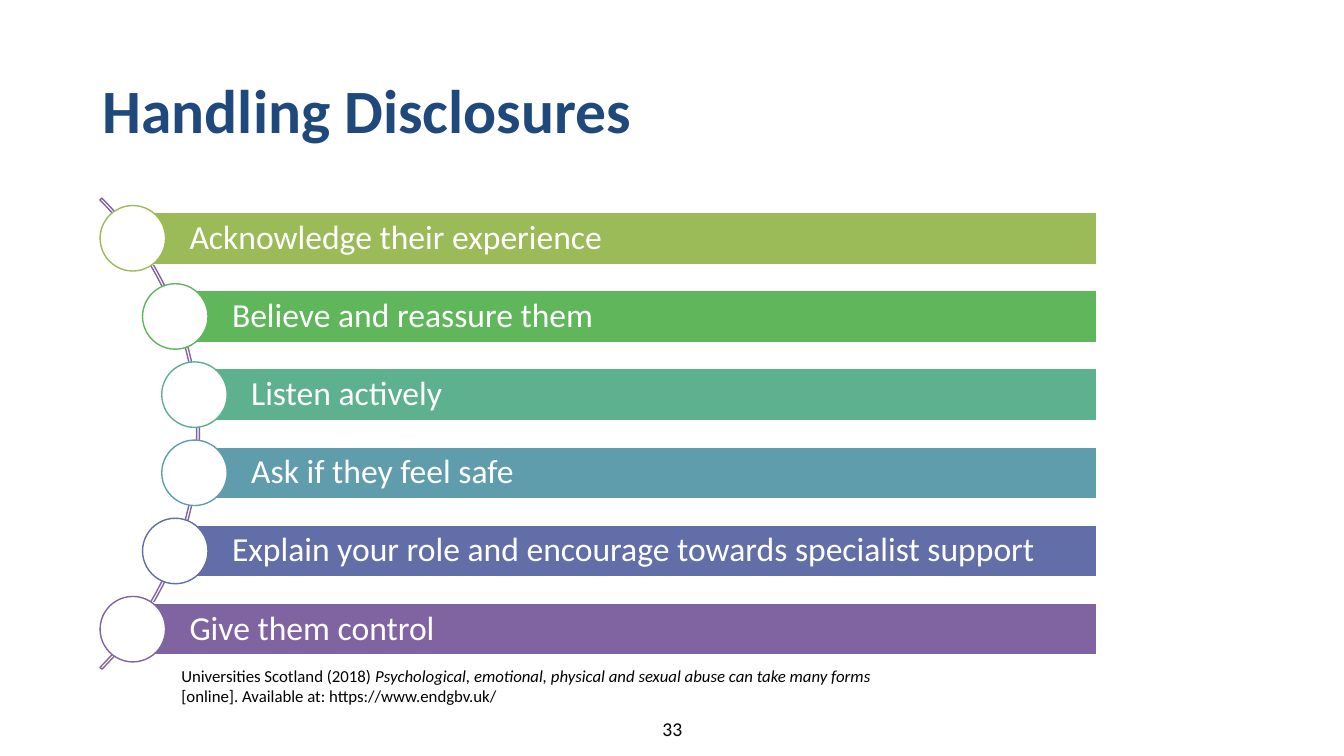
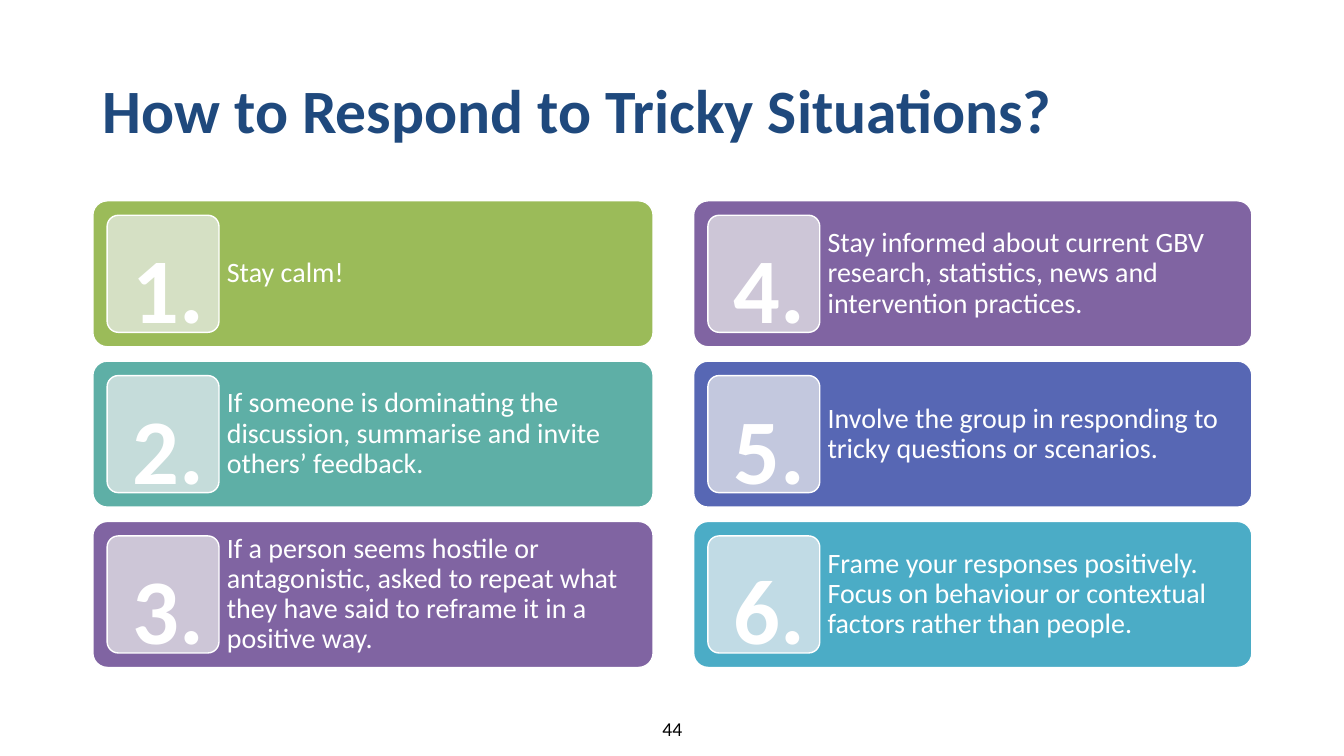
from math import sqrt
from pptx import Presentation
from pptx.dml.color import RGBColor
from pptx.enum.shapes import MSO_SHAPE as Shape
from pptx.enum.text import MSO_ANCHOR as Anchor, PP_ALIGN as Align
from pptx.util import Cm, Pt

FONT = "Calibri"
WHITE, BLACK, NAVY, PURPLE = "FFFFFF", "000000", "1F497D", "8064A2"
LEFT, WIDTH = 2.34, 29.21
NORMAL_INSETS = (0.25, 0.13, 0.25, 0.13)
color = RGBColor.from_string


def add_shape(page, kind, left, top, width, height, fill, line):
    shape = page.shapes.add_shape(kind, Cm(left), Cm(top), Cm(width), Cm(height))
    shape.shadow.inherit = False
    if fill:
        shape.fill.solid()
        shape.fill.fore_color.rgb = color(fill)
    else:
        shape.fill.background()
    shape.line.color.rgb = color(line)
    shape.line.width = Pt(1)
    return shape


def write(shape, text, size, ink, bold=False, align=Align.LEFT,
          anchor=Anchor.MIDDLE, insets=NORMAL_INSETS, spacing=0.9):
    frame = shape.text_frame
    frame.word_wrap = True
    frame.vertical_anchor = anchor
    (frame.margin_left, frame.margin_top,
     frame.margin_right, frame.margin_bottom) = map(Cm, insets)
    para = frame.paragraphs[0]
    para.alignment = align
    para.line_spacing = spacing
    para.font.name = FONT
    para.font.size = Pt(size)
    para.font.bold = bold
    para.font.color.rgb = color(ink)
    para.add_run().text = text
    return para


deck = Presentation()
deck.slide_width, deck.slide_height = Cm(33.87), Cm(19.05)

# Title and page number of every slide
pages = []
for title, number in [("Handling Disclosures", "33"),
                      ("How to Respond to Tricky Situations?", "44")]:
    page = deck.slides.add_slide(deck.slide_layouts[6])
    box = page.shapes.add_textbox(Cm(LEFT), Cm(1.02), Cm(WIDTH), Cm(3.68))
    write(box, title, 44, NAVY, bold=True)
    box = page.shapes.add_textbox(Cm(LEFT), Cm(17.93), Cm(WIDTH), Cm(0.89))
    write(box, number, 14, BLACK, align=Align.CENTER, anchor=Anchor.TOP, spacing=1.0)
    pages.append(page)
disclosures, situations = pages

# Disclosures: arc behind the steps
ARC_X, ARC_Y, ARC_SIZE = -3.37, 10.93, 16.79
arc = add_shape(disclosures, Shape.BLOCK_ARC, ARC_X - ARC_SIZE / 2, ARC_Y - ARC_SIZE / 2,
                ARC_SIZE, ARC_SIZE, None, PURPLE)
for index, value in enumerate((189, 27, 0.004)):
    arc.adjustments[index] = value

# Disclosures: bars and circles that follow the arc
steps = [
    ("Acknowledge their experience", "9BBB59"),
    ("Believe and reassure them", "5FB65B"),
    ("Listen actively", "5DB18E"),
    ("Ask if they feel safe", "5F9DAC"),
    ("Explain your role and encourage towards specialist support", "626EA7"),
    ("Give them control", PURPLE),
]
RADIUS, STEP_PITCH = 8.33, 1.97
BAR_RIGHT, BAR_HEIGHT, CIRCLE = 27.64, 1.31, 1.65
for index, (text, fill) in enumerate(steps):
    rise = (index - (len(steps) - 1) / 2) * STEP_PITCH
    x, y = ARC_X + sqrt(RADIUS ** 2 - rise ** 2), ARC_Y + rise
    bar = add_shape(disclosures, Shape.RECTANGLE, x, y - BAR_HEIGHT / 2,
                    BAR_RIGHT - x, BAR_HEIGHT, fill, WHITE)
    write(bar, text, 24, WHITE, insets=(1.43, 0.18, 0.18, 0.18))
    add_shape(disclosures, Shape.OVAL, x - CIRCLE / 2, y - CIRCLE / 2,
              CIRCLE, CIRCLE, WHITE, fill)

# Disclosures: reference
box = disclosures.shapes.add_textbox(Cm(4.32), Cm(16.64), Cm(18.36), Cm(1.27))
para = write(box, "Universities Scotland (2018) ", 12, BLACK, anchor=Anchor.TOP, spacing=1.0)
span = para.add_run()
span.text = "Psychological, emotional, physical and sexual abuse can take many forms"
span.font.italic = True
para.add_run().text = " [online]. Available at: https://www.endgbv.uk/"

# Situations: numbered cards, filled column by column
cards = [
    ("Stay calm!", "9BBB59", "D5E0C4"),
    ("If someone is dominating the discussion, summarise and invite others’ feedback.",
     "5EAFA6", "C5DCDA"),
    ("If a person seems hostile or antagonistic, asked to repeat what they have said "
     "to reframe it in a positive way.", PURPLE, "CDC6D7"),
    ("Stay informed about current GBV research, statistics, news and intervention practices.",
     PURPLE, "CDC6D7"),
    ("Involve the group in responding to tricky questions or scenarios.", "5767B4", "C3C8DE"),
    ("Frame your responses positively. Focus on behaviour or contextual factors "
     "rather than people.", "4BACC6", "C1DBE5"),
]
columns = [(LEFT, 14.12), (17.48, 14.07)]
CARD_TOP, CARD_HEIGHT, CARD_PITCH = 5.06, 3.68, 4.04
BADGE_WIDTH, BADGE_HEIGHT = 2.82, 2.95
for index, (text, fill, tint) in enumerate(cards):
    column, row = divmod(index, 3)
    left, width = columns[column]
    top = CARD_TOP + row * CARD_PITCH
    card = add_shape(situations, Shape.ROUNDED_RECTANGLE, left, top,
                     width, CARD_HEIGHT, fill, WHITE)
    write(card, text, 20, WHITE, insets=(3.27, 0.1, 0.1, 0.1))
    badge_left, badge_top = left + 0.36, top + (CARD_HEIGHT - BADGE_HEIGHT) / 2
    badge = add_shape(situations, Shape.ROUNDED_RECTANGLE, badge_left, badge_top,
                      BADGE_WIDTH, BADGE_HEIGHT, tint, WHITE)
    card.adjustments[0] = badge.adjustments[0] = 0.1
    box = situations.shapes.add_textbox(Cm(badge_left + 0.14), Cm(badge_top + 0.41),
                                        Cm(BADGE_WIDTH), Cm(2.84))
    write(box, f"{index + 1}.", 66, WHITE, bold=True, align=Align.CENTER,
          anchor=Anchor.TOP, insets=(0, 0, 0, 0), spacing=1.0)

deck.save("out.pptx")
